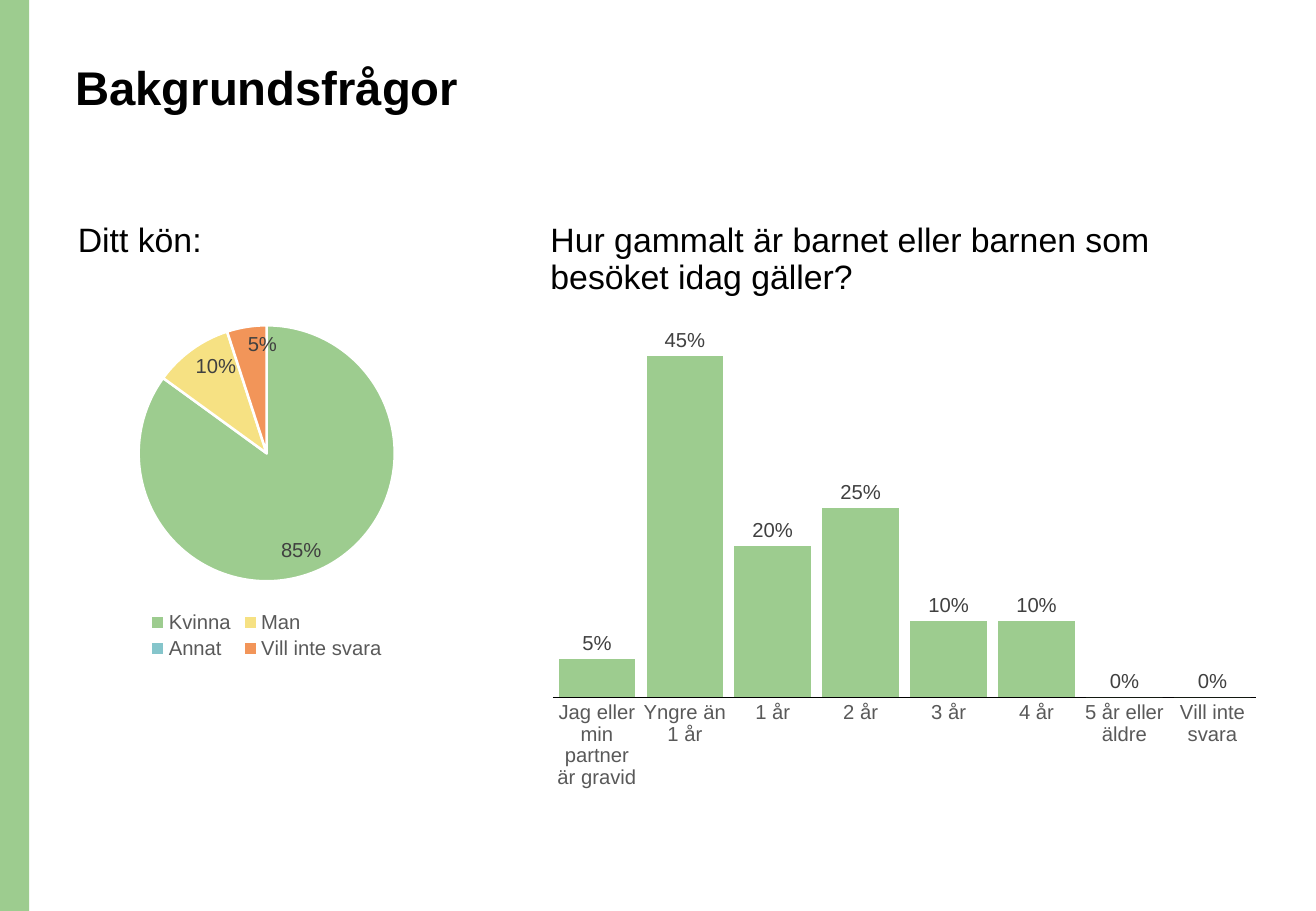
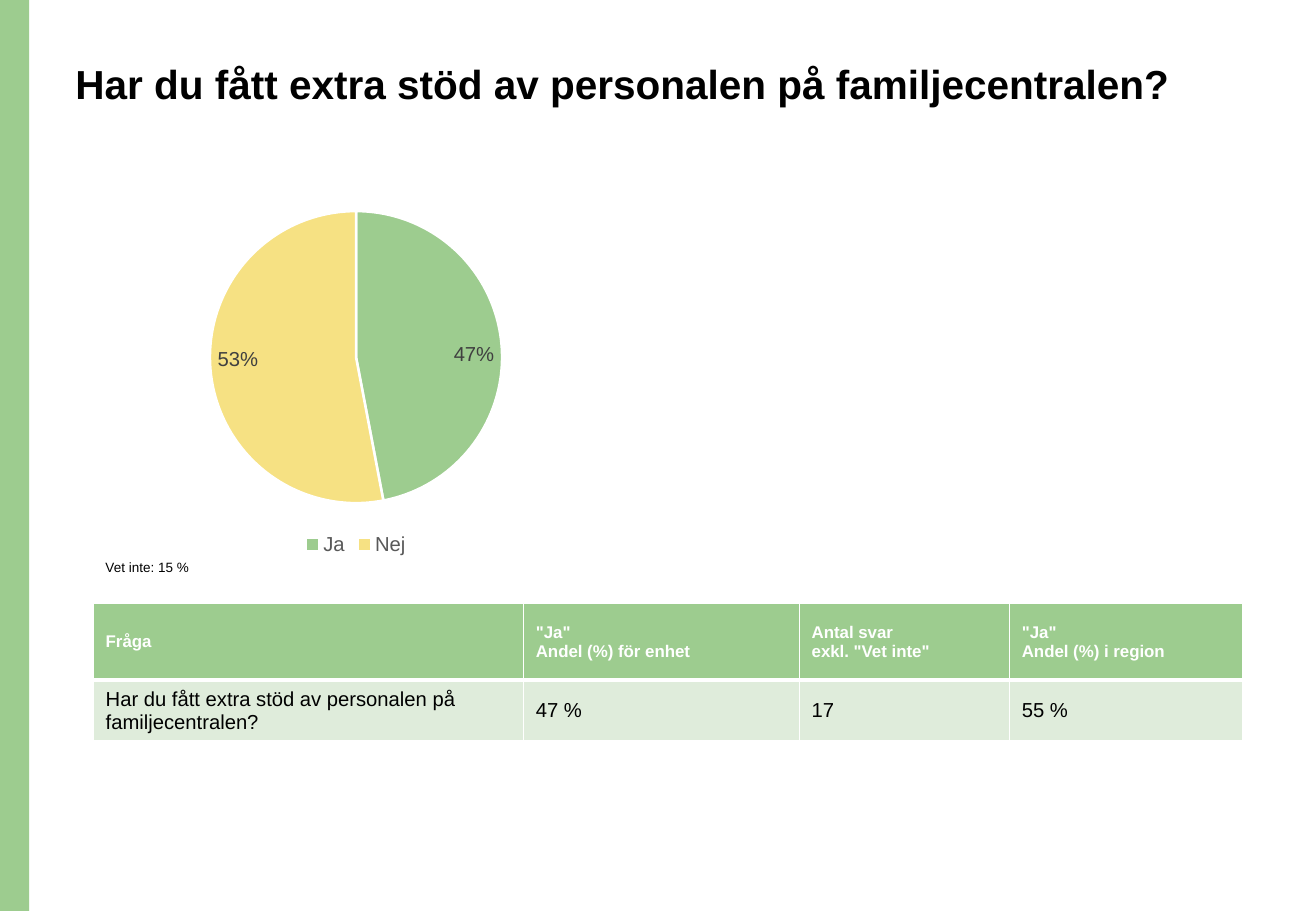
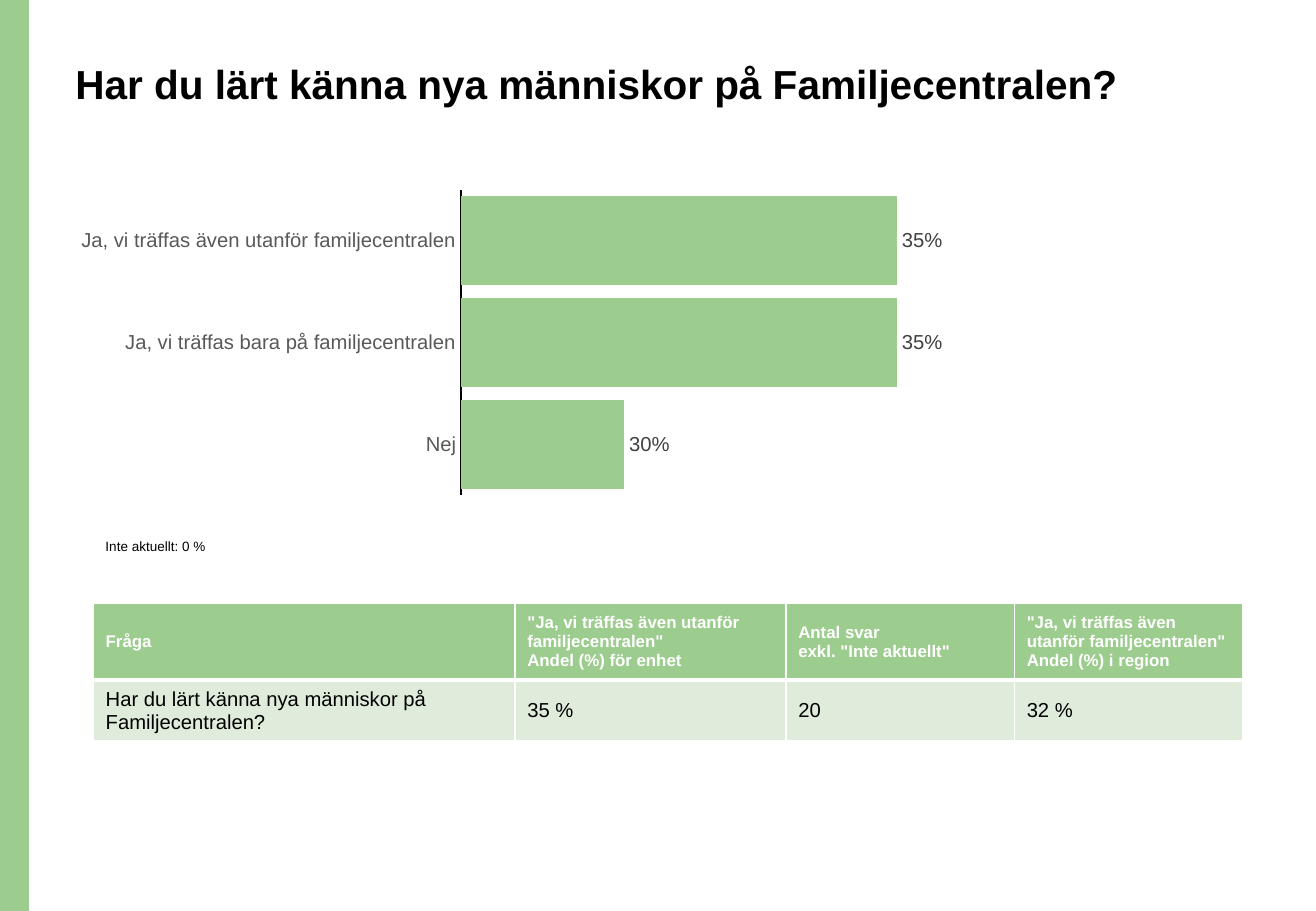
import lxml.etree
import pptx
import pptx.chart.data
import pptx.dml.color
import pptx.enum.chart
import pptx.enum.shapes
import pptx.enum.text
import pptx.oxml.ns
import pptx.util

Inches = pptx.util.Inches
Pt = pptx.util.Pt
Kind = pptx.enum.chart.XL_CHART_TYPE
Spot = pptx.enum.chart.XL_LABEL_POSITION
Fit = pptx.enum.text.MSO_AUTO_SIZE
Anchor = pptx.enum.text.MSO_ANCHOR
qn = pptx.oxml.ns.qn


class Theme:
    rgb = pptx.dml.color.RGBColor.from_string
    font = "Arial"
    green, yellow, blue, orange = map(rgb, ("9DCC8F", "F6E183", "85C5CB", "F29559"))
    pale, white, black = map(rgb, ("DFECDB", "FFFFFF", "000000"))
    label, axis = map(rgb, ("404040", "595959"))
    hues = (green, yellow, blue, orange)
    big, title, lead, text, head, base, note = map(Pt, (28, 24, 20, 12, 10, 10, 8))


def write(frame, lines, size, color, bold=False, space=None):
    """Fill a text frame, one paragraph per line."""
    frame.word_wrap = True
    for i, line in enumerate(lines):
        para = frame.add_paragraph() if i else frame.paragraphs[0]
        para.alignment = pptx.enum.text.PP_ALIGN.LEFT
        para.space_before = Pt(0)
        if space:
            para.line_spacing = space
        run = para.add_run()
        run.text = line
        run.font.name, run.font.size, run.font.bold = Theme.font, size, bold
        run.font.color.rgb = color


def plot(slide, kind, place, names, vals, span=None):
    """Add a one-series pie, column or bar chart."""
    data = pptx.chart.data.CategoryChartData(number_format="0%")
    data.categories = names
    data.add_series("Series 1", vals)
    chart = slide.shapes.add_chart(kind, *map(Inches, place), data).chart
    chart.has_title = False
    chart.font.name, chart.font.size = Theme.font, Theme.base
    chart.font.color.rgb = Theme.black
    pie = kind == Kind.PIE
    area = chart.plots[0]
    area.vary_by_categories = pie
    row = area.series[0]
    chart.has_legend = pie

    # Value labels
    area.has_data_labels = True
    tags = area.data_labels
    tags.show_value, tags.show_percentage = True, False
    tags.number_format = '[<0.01]"";[>0.01]0%' if pie else "0%"
    tags.number_format_is_linked = False
    tags.position = Spot.INSIDE_END if pie else Spot.OUTSIDE_END
    fonts = [(tags.font, Theme.label)]

    if pie:
        for i, color in enumerate(Theme.hues[:len(vals)]):
            form = row.points[i].format
            form.fill.solid()
            form.fill.fore_color.rgb = color
            form.line.color.rgb = Theme.white
            form.line.width = Pt(1.5)
        chart.legend.position = pptx.enum.chart.XL_LEGEND_POSITION.BOTTOM
        chart.legend.include_in_layout = False
        fonts.append((chart.legend.font, Theme.axis))
    else:
        row.format.fill.solid()
        row.format.fill.fore_color.rgb = Theme.green
        row.invert_if_negative = False
        area.gap_width = 15
        side, scale = chart.category_axis, chart.value_axis
        side.major_tick_mark = pptx.enum.chart.XL_TICK_MARK.NONE
        side.format.line.color.rgb = Theme.black
        side.format.line.width = Pt(0.75)
        side.reverse_order = kind == Kind.BAR_CLUSTERED
        scale.has_major_gridlines = False
        scale.visible = False
        scale.minimum_scale, scale.maximum_scale = span
        fonts.append((side.tick_labels.font, Theme.axis))

    for font, color in fonts:
        font.name, font.size = Theme.font, Theme.text
        font.color.rgb = color


deck = pptx.Presentation()
deck.slide_width, deck.slide_height = Inches(10.83), Inches(7.5)

# Slides with titles: layout 3 has two bodies, layout 5 only a title
heads = [
    (3, "Bakgrundsfrågor", Theme.big),
    (5, "Har du fått extra stöd av personalen på familjecentralen?", Theme.title),
    (5, "Har du lärt känna nya människor på Familjecentralen?", Theme.title),
]
slides = []
for index, text, size in heads:
    slide = deck.slides.add_slide(deck.slide_layouts[index])
    title = slide.shapes.title
    title.left, title.top, title.width, title.height = map(Inches, (0.52, 0.48, 9.34, 1.02))
    title.text_frame.auto_size = Fit.NONE
    title.text_frame.vertical_anchor = Anchor.TOP
    write(title.text_frame, [text], size, Theme.black, True, 0.9)
    slides.append(slide)
back, aid, meet = slides

# Green band, moved to the master so that every slide shows it
band = back.shapes.add_shape(pptx.enum.shapes.MSO_SHAPE.RECTANGLE,
                             0, 0, Inches(0.24), deck.slide_height)
band.shadow.inherit = False
band.fill.solid()
band.fill.fore_color.rgb = Theme.green
band.line.fill.background()
deck.slide_master.shapes.element.insert(2, band.element)

# Slide 1: two questions, each over its chart
asks = [
    (1, (0.54, 1.79, 4.58, 0.46), "Ditt kön:"),
    (2, (4.43, 1.79, 6.03, 0.74),
     "Hur gammalt är barnet eller barnen som besöket idag gäller?"),
]
for index, place, text in asks:
    body = back.placeholders[index]
    body.left, body.top, body.width, body.height = map(Inches, place)
    body.text_frame.auto_size = Fit.NONE
    props = body.text_frame.paragraphs[0]._p.get_or_add_pPr()
    props.set("marL", "0")
    props.set("indent", "0")
    lxml.etree.SubElement(props, qn("a:buNone"))
    write(body.text_frame, [text], Theme.lead, Theme.black, space=0.9)

plot(back, Kind.PIE, (0.53, 2.54, 3.33, 2.93),
     ["Kvinna", "Man", "Annat", "Vill inte svara"], [0.85, 0.1, 0, 0.05])
plot(back, Kind.COLUMN_CLUSTERED, (4.43, 2.54, 6.03, 4.03),
     ["Jag eller min partner är gravid", "Yngre än 1 år", "1 år", "2 år", "3 år",
      "4 år", "5 år eller äldre", "Vill inte svara"],
     [0.05, 0.45, 0.2, 0.25, 0.1, 0.1, 0, 0], (0, 0.5))

# Slides 2 and 3: chart of the answers
plot(aid, Kind.PIE, (1.22, 1.6, 3.42, 3.01), ["Ja", "Nej"], [0.47, 0.53])
plot(meet, Kind.BAR_CLUSTERED, (0.52, 1.51, 7.46, 2.62),
     ["Ja, vi träffas även utanför familjecentralen",
      "Ja, vi träffas bara på familjecentralen", "Nej"],
     [0.35, 0.35, 0.3], (0.27, 0.36))

# Slides 2 and 3: note and table
sums = [
    (aid, heads[1][1], '"Ja"', "Vet inte", "15 %", (4.49, 0.48),
     (3.54, 2.27, 1.73, 1.92), ("47 %", "17", "55 %")),
    (meet, heads[2][1], '"Ja, vi träffas även utanför familjecentralen"',
     "Inte aktuellt", "0 %", (4.31, 0.28),
     (3.47, 2.23, 1.88, 1.88), ("35 %", "20", "32 %")),
]
for slide, ask, yes, skip, share, (top, high), wides, vals in sums:
    box = slide.shapes.add_textbox(Inches(0.77), Inches(top), Inches(2.1), Inches(high))
    box.text_frame.auto_size = Fit.SHAPE_TO_FIT_TEXT
    write(box.text_frame, [f"{skip}: {share}"], Theme.note, Theme.black, space=1.5)

    rows = [
        [["Fråga"], [yes, "Andel (%) för enhet"],
         ["Antal svar", f'exkl. "{skip}"'], [yes, "Andel (%) i region"]],
        [[text] for text in (ask, *vals)],
    ]
    table = slide.shapes.add_table(2, 4, Inches(0.77), Inches(4.97),
                                   Inches(9.46), Inches(1.09)).table
    table.horz_banding = False
    for col, wide in zip(table.columns, wides):
        col.width = Inches(wide)
    for row, tall in zip(table.rows, (0.63, 0.46)):
        row.height = Inches(tall)
    for r, line in enumerate(rows):
        thick = "lnT" if r else "lnB"
        for c, texts in enumerate(line):
            cell = table.cell(r, c)
            cell.vertical_anchor = Anchor.MIDDLE
            props = cell._tc.get_or_add_tcPr()
            for edge in ("lnL", "lnR", "lnT", "lnB"):
                rule = lxml.etree.SubElement(props, qn(f"a:{edge}"),
                                             w=str(int(Pt(3 if edge == thick else 1))))
                fill = lxml.etree.SubElement(rule, qn("a:solidFill"))
                lxml.etree.SubElement(fill, qn("a:srgbClr"), val=str(Theme.white))
            cell.fill.solid()
            cell.fill.fore_color.rgb = Theme.pale if r else Theme.green
            write(cell.text_frame, texts, Theme.text if r else Theme.head,
                  Theme.black if r else Theme.white, not r)

deck.save("out.pptx")
